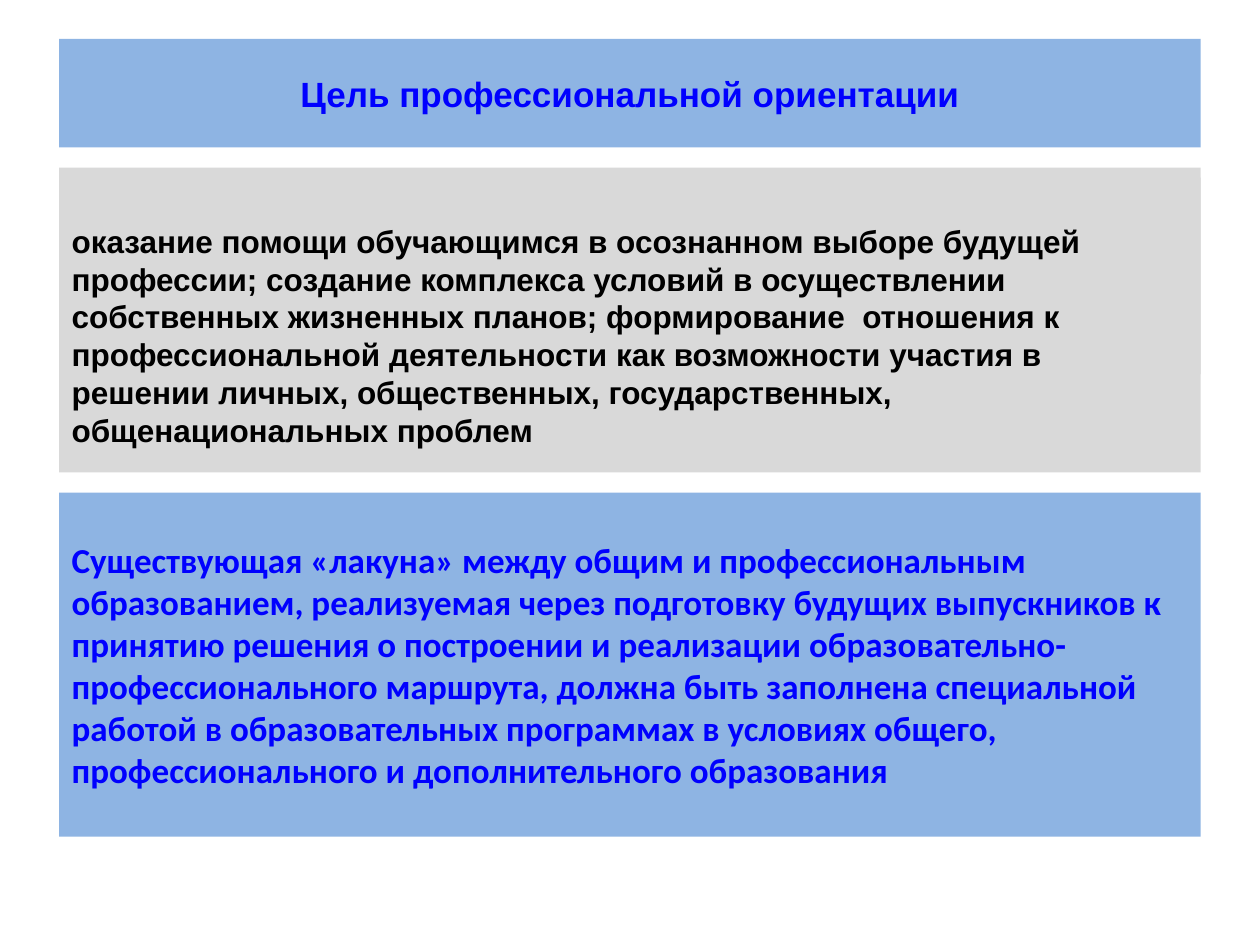
from pptx import Presentation
from pptx.dml.color import RGBColor
from pptx.enum import shapes, text
from pptx.util import Inches, Pt

SKY = RGBColor(0x8E, 0xB4, 0xE3)
GREY = RGBColor(0xD9, 0xD9, 0xD9)
BLUE = RGBColor(0x00, 0x00, 0xFF)
BLACK = RGBColor(0x00, 0x00, 0x00)

LEFT, WIDTH = 0.47, 9.06

TITLE = "Цель профессиональной ориентации"
GOAL = (
    "оказание помощи обучающимся в осознанном выборе будущей профессии; "
    "создание комплекса условий в осуществлении собственных жизненных планов; "
    "формирование  отношения к профессиональной деятельности как возможности "
    "участия в решении личных, общественных, государственных, "
    "общенациональных проблем"
)
GAP = (
    "Существующая «лакуна» между общим и профессиональным образованием, "
    "реализуемая через подготовку будущих выпускников к принятию решения "
    "о построении и реализации образовательно-профессионального маршрута, "
    "должна быть заполнена специальной работой в образовательных программах "
    "в условиях общего, профессионального и дополнительного образования"
)


def add_panel(page, top, height, fill):
    """Add a full-width borderless rectangle."""
    panel = page.shapes.add_shape(
        shapes.MSO_SHAPE.RECTANGLE,
        Inches(LEFT), Inches(top), Inches(WIDTH), Inches(height),
    )
    panel.shadow.inherit = False
    panel.fill.solid()
    panel.fill.fore_color.rgb = fill
    panel.line.fill.background()
    return panel


def write(panel, words, color, align=text.PP_ALIGN.LEFT, inset=0.05, **font):
    """Put one bold paragraph in a panel, centred vertically."""
    frame = panel.text_frame
    layout = {
        "word_wrap": True,
        "vertical_anchor": text.MSO_ANCHOR.MIDDLE,
        "margin_top": Inches(inset),
    }
    for name, value in layout.items():
        setattr(frame, name, value)
    para = frame.paragraphs[0]
    para.alignment = align
    span = para.add_run()
    span.text = words
    for name, value in {"bold": True, **font}.items():
        setattr(span.font, name, value)
    span.font.color.rgb = color


def main():
    deck = Presentation()
    deck.slide_width, deck.slide_height = Inches(10), Inches(7.5)
    page = deck.slides.add_slide(deck.slide_layouts[6])

    # Grey backing that extends the goal panel upwards
    add_panel(page, 1.33, 1.64, GREY)

    # Title band
    write(add_panel(page, 0.31, 0.86, SKY), TITLE, BLUE,
          align=text.PP_ALIGN.CENTER, name="Arial", size=Pt(20))

    # Goal statement
    write(add_panel(page, 1.41, 2.34, GREY), GOAL, BLACK,
          inset=0.21, name="Arial", size=Pt(18))

    # Gap between general and vocational education
    write(add_panel(page, 3.91, 2.73, SKY), GAP, BLUE,
          name="Calibri", size=Pt(20))

    deck.save("out.pptx")


if __name__ == "__main__":
    main()
